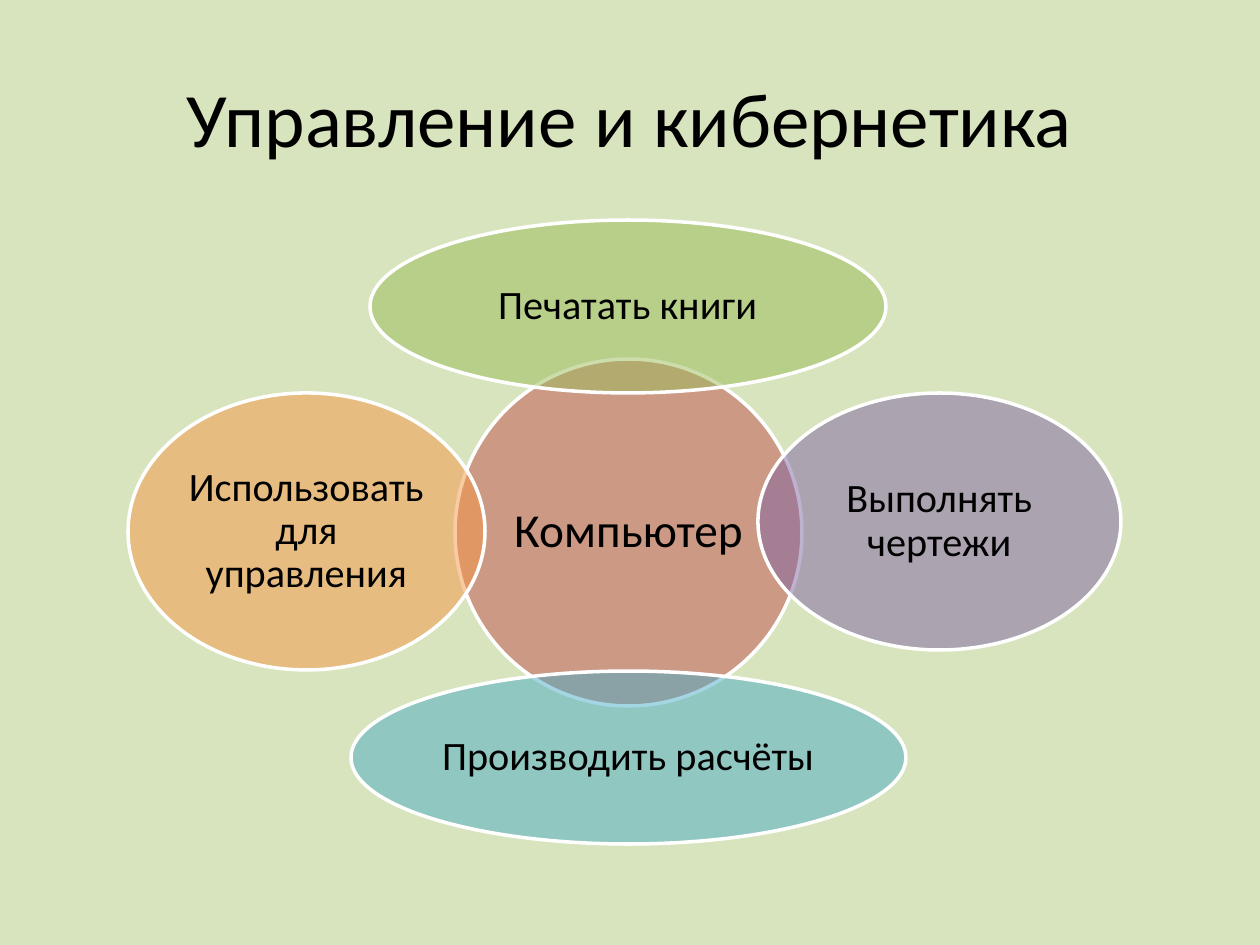
from dataclasses import dataclass

from lxml.etree import SubElement
from pptx import Presentation
from pptx.dml.color import RGBColor
from pptx.enum.shapes import MSO_SHAPE
from pptx.enum.text import MSO_ANCHOR, PP_ALIGN
from pptx.oxml.ns import qn
from pptx.util import Pt

EMU_PER_PX = 914400 / 126


@dataclass(frozen=True)
class Theme:
    font: str = "Calibri"
    background: str = "D7E4BD"
    text: str = "000000"
    outline: str = "FFFFFF"
    red: str = "C0504D"
    green: str = "9BBB59"
    purple: str = "8064A2"
    blue: str = "4BACC6"
    orange: str = "F79646"
    title_size: int = 44
    center_size: int = 27
    label_size: int = 23


THEME = Theme()

# Text, box in px (left, top, width, height), fill, type size, inset in px
ELLIPSES = [
    ("Компьютер", (455, 359, 347, 347), THEME.red, THEME.center_size, 5),
    ("Печатать книги", (370, 220, 516, 173), THEME.green, THEME.label_size, 4),
    ("Выполнять чертежи", (758, 393, 363, 257), THEME.purple, THEME.label_size, 4),
    ("Производить расчёты", (351, 671, 555, 173), THEME.blue, THEME.label_size, 4),
    ("Использовать для управления", (128, 393, 357, 277), THEME.orange,
     THEME.label_size, 4),
]


def px(n):
    return round(n * EMU_PER_PX)


def rgb(value):
    return RGBColor.from_string(value)


def set_text(tf, text, *, size, inset=None, line_spacing=None):
    tf.word_wrap = True
    tf.vertical_anchor = MSO_ANCHOR.MIDDLE
    if inset is not None:
        tf.margin_left = tf.margin_top = tf.margin_right = tf.margin_bottom = px(inset)
    p = tf.paragraphs[0]
    p.alignment = PP_ALIGN.CENTER
    p.line_spacing = line_spacing
    r = p.add_run()
    r.text = text
    r.font.name = THEME.font
    r.font.size = Pt(size)
    r.font.color.rgb = rgb(THEME.text)


def set_fill(sp, color, opacity):
    """Fill a shape with a colour at an opacity given in percent."""
    sp.fill.solid()
    sp.fill.fore_color.rgb = rgb(color)
    srgb = sp._element.spPr.find(qn("a:solidFill")).find(qn("a:srgbClr"))
    SubElement(srgb, qn("a:alpha")).set("val", str(opacity * 1000))


def add_title(s, text):
    title = s.shapes.title
    title.left, title.top, title.width, title.height = map(px, (63, 38, 1134, 157))
    set_text(title.text_frame, text, size=THEME.title_size)


def add_ellipse(shapes, text, box, color, size, inset):
    sp = shapes.add_shape(MSO_SHAPE.OVAL, *map(px, box))
    sp.shadow.inherit = False
    set_fill(sp, color, 50)
    sp.line.color.rgb = rgb(THEME.outline)
    sp.line.width = Pt(2)
    set_text(sp.text_frame, text, size=size, inset=inset, line_spacing=0.9)


def main():
    prs = Presentation()
    prs.slide_width, prs.slide_height = px(1260), px(945)
    s = prs.slides.add_slide(prs.slide_layouts[5])
    s.background.fill.solid()
    s.background.fill.fore_color.rgb = rgb(THEME.background)
    add_title(s, "Управление и кибернетика")
    diagram = s.shapes.add_group_shape()
    for ellipse in ELLIPSES:
        add_ellipse(diagram.shapes, *ellipse)
    prs.save("out.pptx")


if __name__ == "__main__":
    main()
